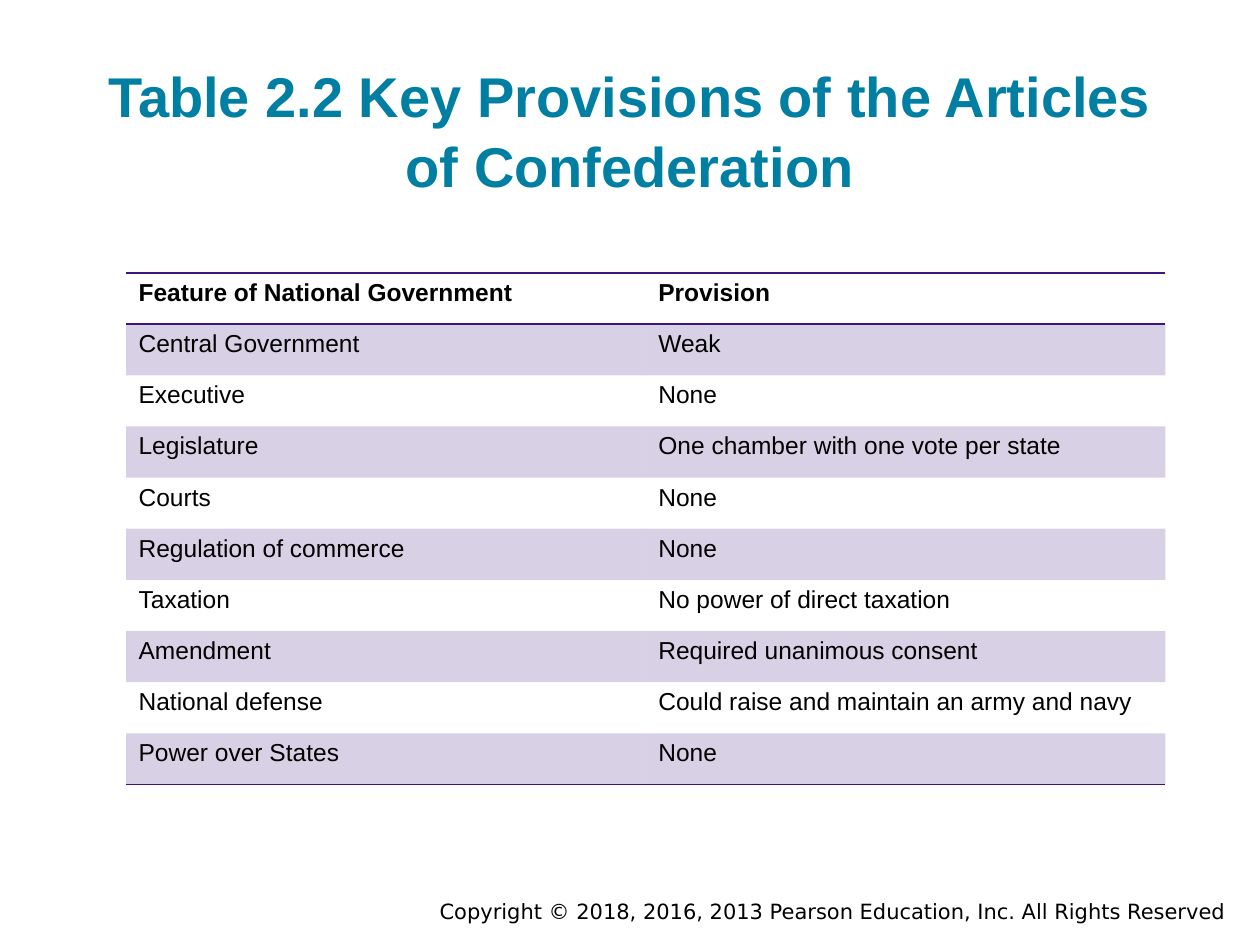
"""Build the slide listing key provisions of the Articles of Confederation."""
from dataclasses import dataclass
from typing import NamedTuple

from lxml import etree
from pptx import Presentation
from pptx import util as u
from pptx.dml.color import RGBColor
from pptx.enum import text
from pptx.oxml import ns


@dataclass(frozen=True)
class Theme:
    font: str = "Arial"
    footer_font: str = "DejaVu Sans"
    title_color: str = "007FA3"
    text_color: str = "000000"
    accent: str = "3C1581"
    band_opacity: int = 20
    rule_width: float = 1
    title_size: float = 32
    table_size: float = 14
    footer_size: float = 12
    plain_table_style: str = "{2D5ABB26-0587-4C30-8999-92F81FD0307C}"


class Box(NamedTuple):
    left: float
    top: float
    width: float
    height: float

    def lengths(self) -> list[u.Length]:
        return [u.Pt(value) for value in self]


class Provision(NamedTuple):
    feature: str
    provision: str


THEME = Theme()
TITLE_BOX = Box(36, 17.3, 648, 103.7)
TABLE_BOX = Box(72, 156, 594, 292.5)
FOOTER_BOX = Box(144, 510, 563.7, 21.6)
HEADER = Provision("Feature of National Government", "Provision")
PROVISIONS = [
    Provision("Central Government", "Weak"),
    Provision("Executive", "None"),
    Provision("Legislature", "One chamber with one vote per state"),
    Provision("Courts", "None"),
    Provision("Regulation of commerce", "None"),
    Provision("Taxation", "No power of direct taxation"),
    Provision("Amendment", "Required unanimous consent"),
    Provision("National defense", "Could raise and maintain an army and navy"),
    Provision("Power over States", "None"),
]


def add_run(paragraph, words: str, size: float, color: str,
            font: str = THEME.font, bold: bool = False) -> None:
    """Add one formatted run to a paragraph."""
    run = paragraph.add_run()
    run.text = words
    run.font.name = font
    run.font.size = u.Pt(size)
    run.font.bold = bold
    run.font.color.rgb = RGBColor.from_string(color)


def add_rule(cell, side: str) -> None:
    """Draw an accent line on one side of a cell."""
    line = etree.SubElement(cell._tc.get_or_add_tcPr(), ns.qn(f"a:{side}"),
                            w=str(u.Pt(THEME.rule_width)))
    fill = etree.SubElement(line, ns.qn("a:solidFill"))
    etree.SubElement(fill, ns.qn("a:srgbClr"), val=THEME.accent)


def shade(cell, banded: bool) -> None:
    """Give a cell the translucent band, or no fill."""
    if not banded:
        cell.fill.background()
        return
    cell.fill.solid()
    cell.fill.fore_color.rgb = RGBColor.from_string(THEME.accent)
    color = cell._tc.tcPr.find(f"{ns.qn('a:solidFill')}/{ns.qn('a:srgbClr')}")
    etree.SubElement(color, ns.qn("a:alpha"), val=str(THEME.band_opacity * 1000))


def set_title(slide, words: str) -> None:
    """Place and format the title placeholder."""
    title = slide.shapes.title
    title.left, title.top, title.width, title.height = TITLE_BOX.lengths()
    frame = title.text_frame
    frame.word_wrap = True
    frame.auto_size = text.MSO_AUTO_SIZE.NONE
    frame.vertical_anchor = text.MSO_ANCHOR.BOTTOM
    frame.margin_left = frame.margin_right = u.Pt(7.2)
    frame.margin_top = frame.margin_bottom = u.Pt(7.2)
    paragraph = frame.paragraphs[0]
    paragraph.alignment = text.PP_ALIGN.CENTER
    paragraph.line_spacing = 1.05
    add_run(paragraph, words, THEME.title_size, THEME.title_color, bold=True)


def add_provisions(slide, records: list[Provision]) -> None:
    """Add the table with its header, bands and rules."""
    last = len(records) - 1
    table = slide.shapes.add_table(len(records), len(HEADER), *TABLE_BOX.lengths()).table
    table.horz_banding = False
    table._tbl.tblPr.find(ns.qn("a:tableStyleId")).text = THEME.plain_table_style
    for row, record in enumerate(records):
        table.rows[row].height = u.Pt(TABLE_BOX.height / len(records))
        for column, words in enumerate(record):
            cell = table.cell(row, column)
            if row == 0:
                add_rule(cell, "lnT")
            if row in (0, last):
                add_rule(cell, "lnB")
            shade(cell, row % 2 == 1)
            add_run(cell.text_frame.paragraphs[0], words, THEME.table_size,
                    THEME.text_color, bold=row == 0)


def add_footer(slide, words: str) -> None:
    """Add the right-aligned copyright line."""
    frame = slide.shapes.add_textbox(*FOOTER_BOX.lengths()).text_frame
    frame.word_wrap = True
    paragraph = frame.paragraphs[0]
    paragraph.alignment = text.PP_ALIGN.RIGHT
    add_run(paragraph, words, THEME.footer_size, THEME.text_color, THEME.footer_font)


def main() -> None:
    """Build and save the presentation."""
    presentation = Presentation()
    presentation.slide_width, presentation.slide_height = u.Pt(720), u.Pt(540)
    slide = presentation.slides.add_slide(presentation.slide_layouts[5])
    set_title(slide, "Table 2.2 Key Provisions of the Articles of Confederation")
    add_provisions(slide, [HEADER, *PROVISIONS])
    add_footer(slide, "Copyright © 2018, 2016, 2013 Pearson Education, Inc. All Rights Reserved")
    presentation.save("out.pptx")


if __name__ == "__main__":
    main()
